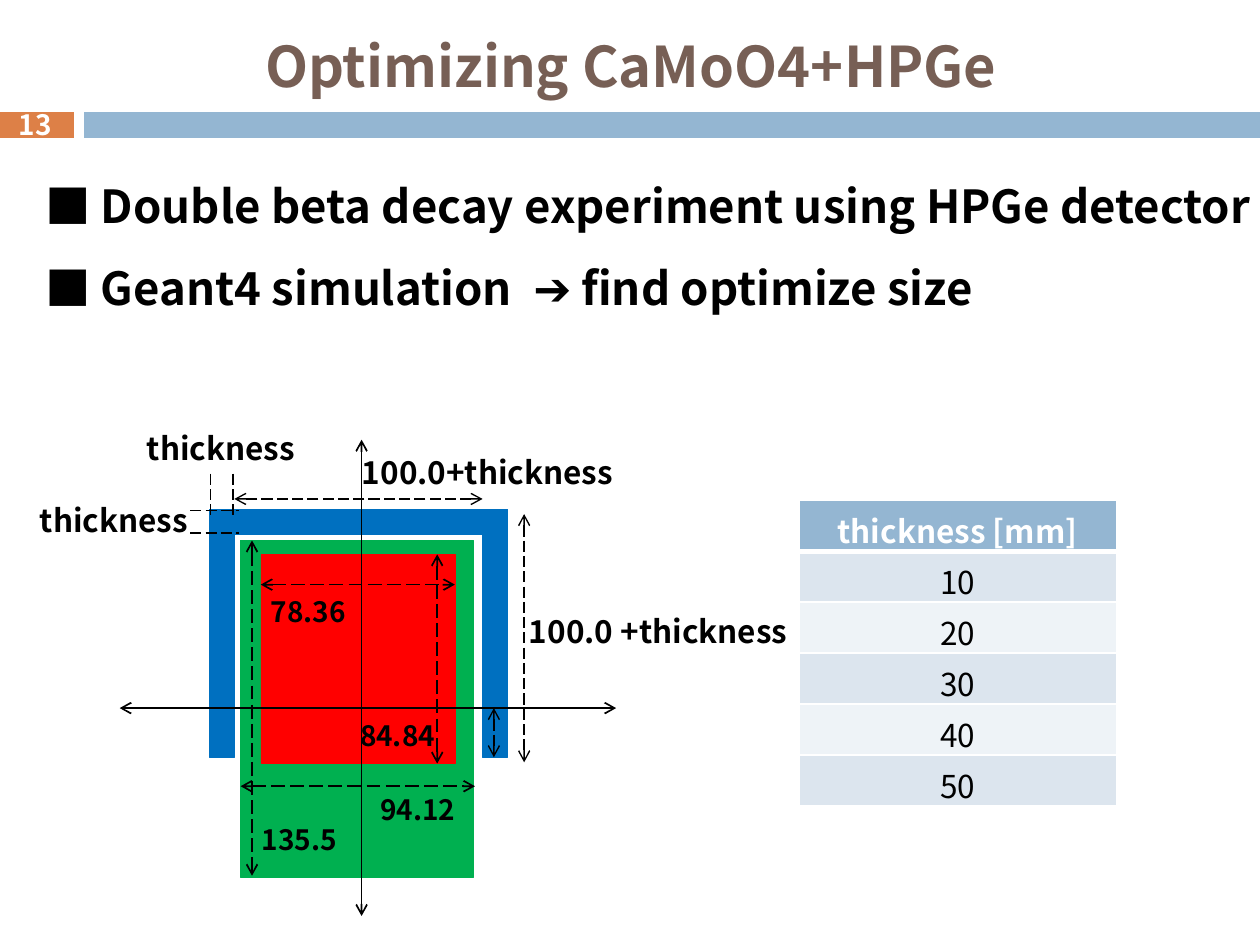
from dataclasses import dataclass

from lxml.etree import SubElement
from pptx import Presentation
from pptx.dml.color import RGBColor
from pptx.enum.dml import MSO_LINE
from pptx.enum.shapes import MSO_CONNECTOR, MSO_SHAPE
from pptx.enum.text import MSO_ANCHOR, PP_ALIGN
from pptx.oxml.ns import qn
from pptx.util import Inches, Pt


@dataclass(frozen=True)
class Theme:
    font: str = "Noto Sans CJK KR"
    title_color: str = "775F55"
    bar: str = "94B6D2"
    accent: str = "DD8047"
    text: str = "000000"
    white: str = "FFFFFF"
    housing: str = "00B050"
    detector: str = "FF0000"
    crystal: str = "0070C0"
    bands: tuple = ("DCE5EE", "EEF3F7")
    title_size: int = 32
    body_size: int = 26
    label_size: int = 18
    small_size: int = 16


THEME = Theme()


def rgb(color):
    return RGBColor.from_string(color)


def apply_format(target, values):
    for name, value in values.items():
        setattr(target, name, value)


def write_paragraph(paragraph, text, size, color=THEME.text, bold=True,
                    align=PP_ALIGN.LEFT, spacing=None):
    apply_format(paragraph, {"alignment": align, "line_spacing": spacing})
    run = paragraph.add_run()
    run.text = text
    apply_format(run.font, {"name": THEME.font, "size": Pt(size), "bold": bold})
    run.font.color.rgb = rgb(color)
    SubElement(run.font._element, qn("a:ea"), typeface=THEME.font)


def add_text(slide, box, lines, size, anchor=MSO_ANCHOR.TOP, **style):
    frame = slide.shapes.add_textbox(*map(Inches, box)).text_frame
    apply_format(frame, {"word_wrap": True, "vertical_anchor": anchor})
    for index, line in enumerate(lines):
        paragraph = frame.add_paragraph() if index else frame.paragraphs[0]
        write_paragraph(paragraph, line, size, **style)


def add_block(slide, box, color):
    shape = slide.shapes.add_shape(MSO_SHAPE.RECTANGLE, *map(Inches, box))
    shape.shadow.inherit = False
    shape.fill.solid()
    shape.fill.fore_color.rgb = rgb(color)
    shape.line.color.rgb = rgb(color)
    shape.line.width = Pt(0.25)


def add_line(slide, ends, width=1, color=THEME.text, dashed=False, arrows=False):
    connector = slide.shapes.add_connector(
        MSO_CONNECTOR.STRAIGHT, *map(Inches, ends))
    line = connector.line
    line.color.rgb = rgb(color)
    line.width = Pt(width)
    if dashed:
        line.dash_style = MSO_LINE.LONG_DASH
    if arrows:
        for end in ("a:headEnd", "a:tailEnd"):
            SubElement(line._get_or_add_ln(), qn(end), type="arrow")
    SubElement(connector._element.spPr, qn("a:effectLst"))


def add_cell_borders(cell, bottom_width):
    properties = cell._tc.get_or_add_tcPr()
    widths = {"a:lnL": 1, "a:lnR": 1, "a:lnT": 1, "a:lnB": bottom_width}
    for index, (side, width) in enumerate(widths.items()):
        border = SubElement(properties, qn(side), w=str(Pt(width)))
        fill = SubElement(border, qn("a:solidFill"))
        SubElement(fill, qn("a:srgbClr"), val=THEME.white)
        properties.insert(index, border)


def add_thickness_table(slide):
    values = ["thickness [mm]", "10", "20", "30", "40", "50"]
    table = slide.shapes.add_table(
        len(values), 1, *map(Inches, (6.34, 3.97, 2.52, 2.43))).table
    for index, value in enumerate(values):
        is_header = index == 0
        cell = table.cell(index, 0)
        cell.margin_bottom = 0
        cell.fill.solid()
        cell.fill.fore_color.rgb = rgb(
            THEME.bar if is_header else THEME.bands[(index - 1) % 2])
        add_cell_borders(cell, 3 if is_header else 1)
        write_paragraph(cell.text_frame.paragraphs[0], value, THEME.label_size,
                        color=THEME.white if is_header else THEME.text,
                        bold=is_header, align=PP_ALIGN.CENTER)


def add_header(slide):
    add_line(slide, (0.67, 0.99, 10, 0.99), 15, THEME.bar)
    add_line(slide, (0, 0.99, 0.59, 0.99), 15, THEME.accent)
    centered = {"anchor": MSO_ANCHOR.MIDDLE, "align": PP_ALIGN.CENTER}
    add_text(slide, (-0.01, 0.87, 0.58, 0.23), ["13"], THEME.small_size,
             color=THEME.white, **centered)
    add_text(slide, (0.01, 0.16, 10, 0.71), ["Optimizing CaMoO4+HPGe"],
             THEME.title_size, color=THEME.title_color, **centered)


def add_detector_diagram(slide):
    # Housing, detector, and the crystal on the top and both sides
    for box, color in (
        ((1.91, 4.29, 1.85, 2.67), THEME.housing),
        ((2.07, 4.4, 1.54, 1.66), THEME.detector),
        ((1.86, 4.04, 1.97, 0.2), THEME.crystal),
        ((1.66, 4.04, 0.2, 1.97), THEME.crystal),
        ((3.83, 4.04, 0.2, 1.97), THEME.crystal),
    ):
        add_block(slide, box, color)

    # Axes
    for ends in ((2.87, 3.49, 2.87, 7.27), (0.95, 5.62, 4.89, 5.62)):
        add_line(slide, ends, arrows=True)

    # Dimension arrows: housing and detector, then crystal
    for width, arrows in (
        (1, ((2, 4.29, 2, 6.95), (1.91, 6.24, 3.77, 6.24),
             (3.47, 4.4, 3.47, 6.06), (2.07, 4.64, 3.61, 4.64))),
        (0.79, ((4.16, 4.08, 4.16, 6.05), (3.83, 3.96, 1.86, 3.96),
                (3.92, 5.62, 3.92, 6.01))),
    ):
        for ends in arrows:
            add_line(slide, ends, width, dashed=True, arrows=True)

    # Extension lines that mark the thickness
    for x in (1.67, 1.85):
        add_line(slide, (x, 3.76, x, 4.12), 0.79, dashed=True)
    for y in (4.05, 4.23):
        add_line(slide, (1.51, y, 1.9, y), 0.79, dashed=True)

    # Dimension labels
    for text, left, top in (("135.5", 1.98, 6.48), ("94.12", 2.92, 6.24),
                            ("84.84", 2.76, 5.65), ("78.36", 2.05, 4.67)):
        add_text(slide, (left, top, 1.26, 0.37), [text], THEME.small_size)
    for text, left, top, width, align in (
        ("100.0 +thickness", 4.1, 4.81, 2.4, PP_ALIGN.LEFT),
        ("thickness", 0.89, 3.36, 1.73, PP_ALIGN.CENTER),
        ("thickness", 0.04, 3.93, 1.73, PP_ALIGN.CENTER),
        ("100.0+thickness", 2.32, 3.55, 3.1, PP_ALIGN.CENTER),
    ):
        add_text(slide, (left, top, width, 0.4), [text], THEME.label_size,
                 align=align)


def main():
    presentation = Presentation()
    apply_format(presentation, {"slide_width": Inches(10),
                                "slide_height": Inches(7.5)})
    slide = presentation.slides.add_slide(presentation.slide_layouts[6])
    add_header(slide)
    add_text(slide, (0.26, 1.15, 10.09, 1.41),
             ["■ Double beta decay experiment using HPGe detector",
              "■ Geant4 simulation  ➔ find optimize size"],
             THEME.body_size, spacing=1.5)
    add_detector_diagram(slide)
    add_thickness_table(slide)
    presentation.save("out.pptx")


if __name__ == "__main__":
    main()
